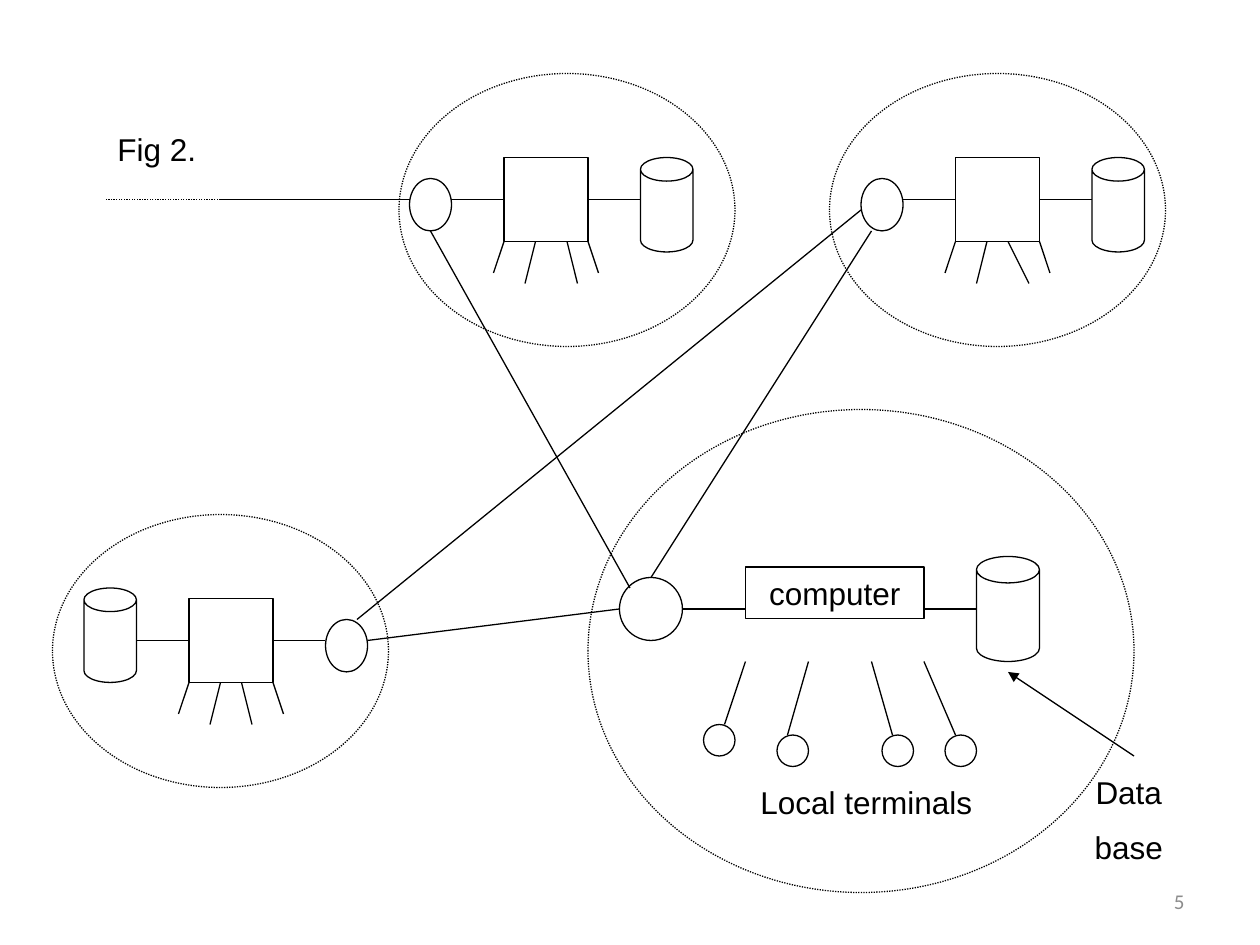
from lxml.etree import SubElement
from pptx import Presentation
from pptx.dml.color import RGBColor
from pptx.enum.dml import MSO_LINE_DASH_STYLE as Dash
from pptx.enum.shapes import MSO_CONNECTOR as Connector, MSO_SHAPE as Shape
from pptx.enum.text import MSO_ANCHOR as Anchor, PP_ALIGN as Align
from pptx.oxml.ns import qn
from pptx.util import Pt

THEME = {
    "ink": RGBColor(0, 0, 0),
    "muted": RGBColor(0x8C, 0x8C, 0x8C),
    "font": "Arial",
    "number_font": "Calibri",
    "size": 18,
    "number_size": 12,
    "line": 0.75,
    "paragraph_gap": 10,
}

SITES = [
    {"box": (546, 90), "area": -72, "node": -54, "disk": (78, 0), "leg": (30, 42)},
    {"box": (288, 90), "area": -60, "node": -54, "disk": (78, 0), "leg": (36, 42)},
    {"box": (108, 342), "area": -78, "node": 78, "disk": (-60, -6), "leg": (30, 36)},
]
SITE_LEGS = [(0, -6, 18), (48, 54, 18), (18, 12, 24)]
BOX_SIZE, LINK_LENGTH = 48, 30

MAIN_AREA = (336, 234, 312, 276)
HUB = (354, 330, 36, 36)
COMPUTER = (426, 324, 102, 29.5)
DATABASE = (558, 318, 36, 60)
MAIN_LINKS = [((390, 348), (426, 348)), ((528, 348), (558, 348))]

NETWORK_LINES = [
    ((372, 330), (498, 132)),
    ((360, 336), (246, 132)),
    ((354, 348), (210, 366)),
    ((204, 354), (492, 120)),
    ((234, 114), (126, 114)),
]
OUTSIDE_LINE = ((126, 114), (60, 114))
DATABASE_POINTER = ((648, 432), (576, 384))

TERMINAL_SIZE, TERMINAL_LINE_TOP = 18, 378
TERMINALS = [
    ((402, 414), 426, (414, 414)),
    ((444, 420), 462, (450, 420)),
    ((504, 420), 498, (510, 420)),
    ((540, 420), 528, (546, 420)),
]

LABELS = [
    (["Data", "base"], (600, 438, 90, 61), Align.CENTER),
    (["Local terminals"], (396, 444, 198, 29), Align.CENTER),
    (["Fig 2."], (60, 71, 60, 29), Align.LEFT),
]
SLIDE_NUMBER = ("5", (516, 500.5, 168, 29))


def style_line(line, dotted):
    line.color.rgb = THEME["ink"]
    line.width = Pt(THEME["line"])
    if dotted:
        line.dash_style = Dash.ROUND_DOT


def add_outline(slide, kind, bounds, dotted=False, rim=None):
    shape = slide.shapes.add_shape(kind, *map(Pt, bounds))
    shape.shadow.inherit = False
    shape.fill.background()
    style_line(shape.line, dotted)
    if rim is not None:
        shape.adjustments[0] = rim
    return shape


def add_line(slide, start, end, dotted=False, arrow=False):
    connector = slide.shapes.add_connector(Connector.STRAIGHT, *map(Pt, start + end))
    style_line(connector.line, dotted)
    properties = connector._element.spPr
    if arrow:
        SubElement(properties.find(qn("a:ln")), qn("a:tailEnd"), type="triangle")
    SubElement(properties, qn("a:effectLst"))
    return connector


def write_text(shape, lines, align, font="font", size="size", color="ink"):
    frame = shape.text_frame
    frame.word_wrap = True
    frame.text = "\n".join(lines)
    for index, paragraph in enumerate(frame.paragraphs):
        paragraph.alignment = align
        if index:
            paragraph.space_before = Pt(THEME["paragraph_gap"])
        paragraph.font.name = THEME[font]
        paragraph.font.size = Pt(THEME[size])
        paragraph.font.color.rgb = THEME[color]


def add_site(slide, site):
    left, top = site["box"]
    right, bottom, middle = left + BOX_SIZE, top + BOX_SIZE, top + BOX_SIZE / 2
    disk_left, disk_top = site["disk"]
    add_outline(slide, Shape.OVAL, (left + site["area"], top - 48, 192, 156), dotted=True)
    box = add_outline(slide, Shape.RECTANGLE, (left, top, BOX_SIZE, BOX_SIZE))
    add_outline(slide, Shape.CAN, (left + disk_left, top + disk_top, 30, 54), rim=0.45)
    add_outline(slide, Shape.OVAL, (left + site["node"], top + 12, 24, 30))
    for start, end, drop in SITE_LEGS + [(*site["leg"], 24)]:
        add_line(slide, (left + start, bottom), (left + end, bottom + drop))
    for side, start, end in [(1, left, left - LINK_LENGTH), (3, right, right + LINK_LENGTH)]:
        add_line(slide, (start, middle), (end, middle)).begin_connect(box, side)


def add_main_site(slide):
    add_outline(slide, Shape.OVAL, MAIN_AREA, dotted=True)
    computer = add_outline(slide, Shape.RECTANGLE, COMPUTER)
    write_text(computer, ["computer"], Align.CENTER)
    add_outline(slide, Shape.CAN, DATABASE, rim=0.42)
    add_outline(slide, Shape.OVAL, HUB)
    for start, end in MAIN_LINKS:
        add_line(slide, start, end)
    for corner, line_left, line_end in TERMINALS:
        add_line(slide, (line_left, TERMINAL_LINE_TOP), line_end)
        add_outline(slide, Shape.OVAL, (*corner, TERMINAL_SIZE, TERMINAL_SIZE))


def main():
    presentation = Presentation()
    presentation.slide_width, presentation.slide_height = Pt(720), Pt(540)
    slide = presentation.slides.add_slide(presentation.slide_layouts[6])
    add_main_site(slide)
    for site in SITES:
        add_site(slide, site)
    for start, end in NETWORK_LINES:
        add_line(slide, start, end)
    add_line(slide, *OUTSIDE_LINE, dotted=True)
    add_line(slide, *DATABASE_POINTER, arrow=True)
    for lines, bounds, align in LABELS:
        write_text(slide.shapes.add_textbox(*map(Pt, bounds)), lines, align)
    number, bounds = SLIDE_NUMBER
    number_box = slide.shapes.add_textbox(*map(Pt, bounds))
    number_box.text_frame.vertical_anchor = Anchor.MIDDLE
    write_text(number_box, [number], Align.RIGHT, "number_font", "number_size", "muted")
    presentation.save("out.pptx")


if __name__ == "__main__":
    main()
